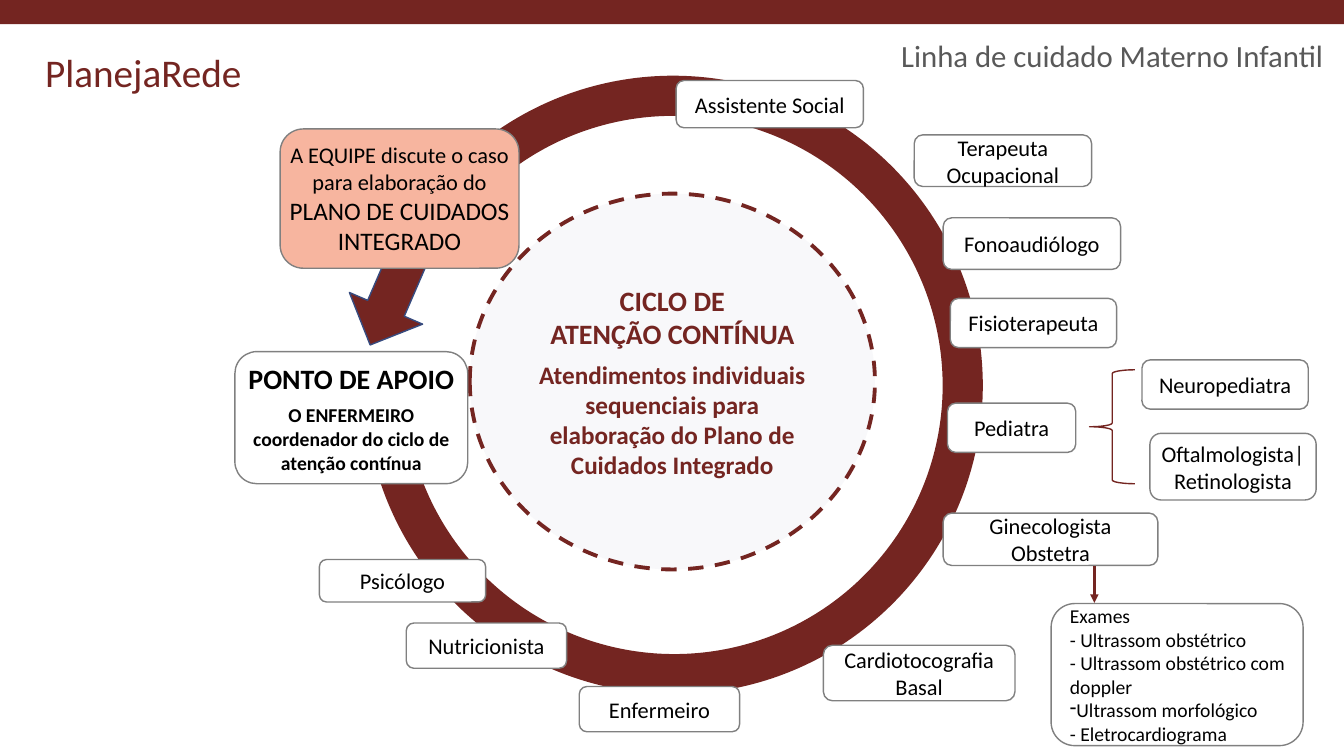
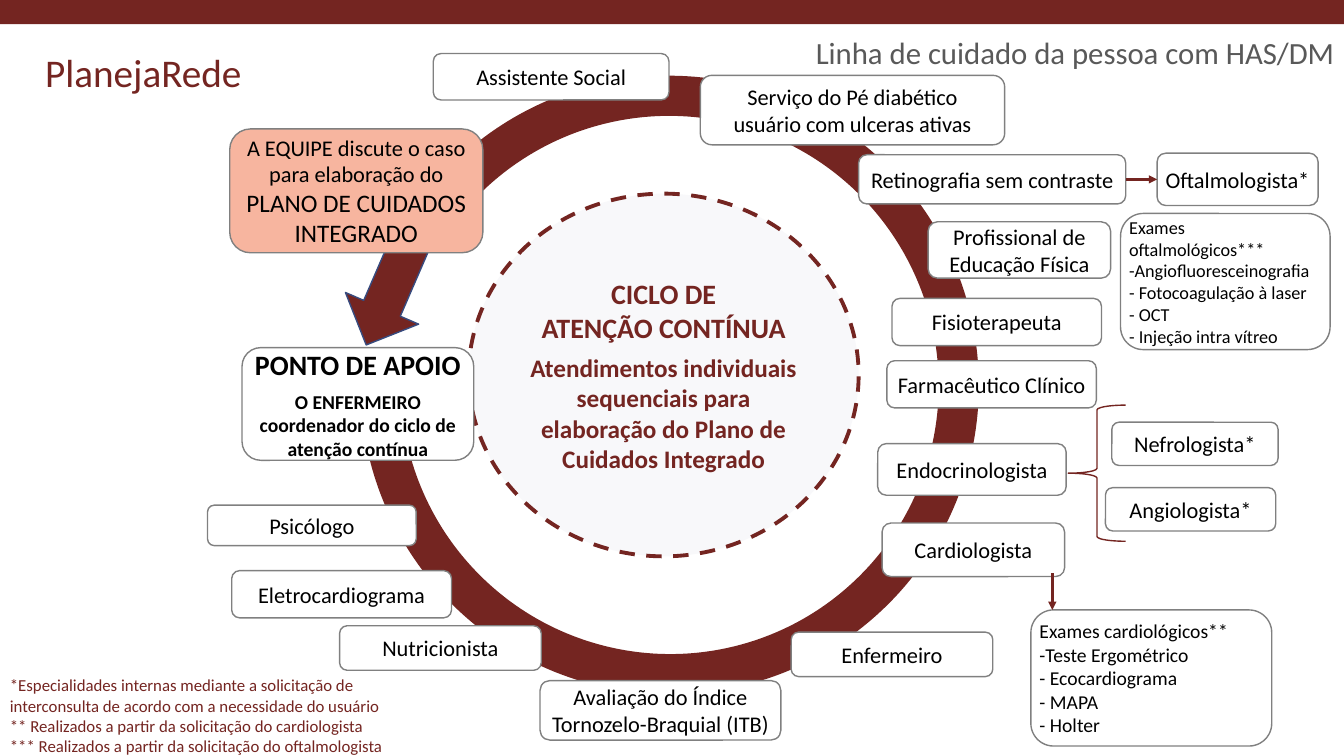
from lxml.etree import SubElement
from pptx import Presentation
from pptx.dml.color import RGBColor
from pptx.enum.dml import MSO_LINE
from pptx.enum.shapes import MSO_CONNECTOR, MSO_SHAPE
from pptx.enum.text import MSO_ANCHOR, MSO_AUTO_SIZE, PP_ALIGN
from pptx.oxml.ns import qn
from pptx.util import Cm, Pt

FONT = "Calibri"
COLORS = {
    "wine": "742521",
    "white": "FFFFFF",
    "black": "000000",
    "gray": "808080",
    "title": "595959",
    "salmon": "F7B59F",
    "pale": "F8F8FA",
    "navy": "374B7F",
}
PAGE_WIDTH, PAGE_HEIGHT = 33.87, 19.05

# Role boxes: text lines, then left, top, width and height in centimetres
MATERNAL_ROLES = [
    (["Enfermeiro"], (14.6, 17.3, 4.04, 1.14)),
    (["Psicólogo"], (8.05, 14.1, 4.19, 1.07)),
    (["Assistente Social"], (17.04, 2.03, 4.72, 1.19)),
    (["Nutricionista"], (10.24, 15.7, 4.04, 1.14)),
    (["Fonoaudiólogo"], (23.77, 5.49, 4.47, 1.3)),
    (["Ginecologista Obstetra"], (23.77, 12.93, 5.41, 1.32)),
    (["Pediatra"], (23.88, 10.16, 3.23, 1.24)),
    (["Fisioterapeuta"], (23.95, 7.52, 4.19, 1.24)),
    (["Cardiotocografia Basal"], (20.75, 16.26, 4.83, 1.4)),
    (["Neuropediatra"], (28.78, 9.07, 4.19, 1.24)),
    (["Oftalmologista|", "Retinologista"], (28.98, 10.92, 4.19, 1.68)),
    (["Terapeuta Ocupacional"], (23.04, 3.4, 4.47, 1.3)),
]
CHRONIC_ROLES = [
    (["Enfermeiro"], (19.94, 15.93, 5.08, 1.12)),
    (["Psicólogo"], (5.23, 12.73, 5.26, 1.02)),
    (["Assistente Social"], (10.92, 1.35, 5.94, 1.17)),
    (["Profissional de Educação Física"], (23.39, 5.59, 4.6, 1.42)),
    (["Fisioterapeuta"], (22.48, 7.52, 5.28, 1.19)),
    (["Eletrocardiograma"], (5.84, 14.38, 5.54, 1.19)),
    (["Nutricionista"], (8.56, 15.77, 5.08, 1.12)),
    (["Avaliação do Índice Tornozelo-Braquial (ITB)"], (13.61, 17.15, 6.07, 1.5)),
    (["Cardiologista"], (22.23, 13.18, 4.6, 1.35)),
    (["Endocrinologista"], (22.12, 11.18, 4.75, 1.3)),
    (["Angiologista*"], (27.86, 12.29, 4.29, 1.09)),
    (["Nefrologista*"], (28.02, 10.64, 4.19, 1.09)),
    (["Farmacêutico Clínico"], (22.35, 9.09, 5.28, 1.19)),
    (["Serviço do Pé diabético", "usuário com ulceras ativas"], (17.65, 1.9, 7.67, 1.75)),
]


def color(name):
    return RGBColor.from_string(COLORS[name])


def lengths(values):
    return [Cm(value) for value in values]


def write(box, lines, tint="black", bold=False, align=PP_ALIGN.LEFT):
    """Fill a box with paragraphs given as (text, size, space before)."""
    frame = box.text_frame
    for index, (text, size, before) in enumerate(lines):
        paragraph = frame.add_paragraph() if index else frame.paragraphs[0]
        paragraph.alignment = align
        if before:
            paragraph.space_before = Pt(before)
        span = paragraph.add_run()
        span.text = text
        span.font.name = FONT
        span.font.size = Pt(size)
        span.font.bold = bold
        span.font.color.rgb = color(tint)


def same_size(texts, size):
    return [(text, size, 0) for text in texts]


def add_figure(page, kind, place, fill=None, line=None, width=1):
    figure = page.shapes.add_shape(kind, *lengths(place))
    figure.shadow.inherit = False
    if fill:
        figure.fill.solid()
        figure.fill.fore_color.rgb = color(fill)
    else:
        figure.fill.background()
    if line:
        figure.line.color.rgb = color(line)
        figure.line.width = Pt(width)
    else:
        figure.line.fill.background()
    return figure


def tighten(box):
    frame = box.text_frame
    frame.word_wrap = True
    frame.vertical_anchor = MSO_ANCHOR.MIDDLE
    frame.margin_left = frame.margin_right = Cm(0.05)
    frame.margin_top = frame.margin_bottom = Cm(0.05)


def add_card(page, place, lines, fill="white", bold=False, align=PP_ALIGN.CENTER):
    card = add_figure(page, MSO_SHAPE.ROUNDED_RECTANGLE, place, fill, "gray")
    tighten(card)
    write(card, lines, bold=bold, align=align)
    return card


def add_exams(page, place, texts, size):
    return add_card(page, place, same_size(texts, size), align=PP_ALIGN.LEFT)


def indent_list(box, dashed):
    """Indent every paragraph and give the one at index dashed a dash bullet."""
    for index, paragraph in enumerate(box.text_frame.paragraphs):
        properties = paragraph._p.get_or_add_pPr()
        properties.set("marL", str(Cm(0.25)))
        properties.set("indent", "0")
        if index == dashed:
            SubElement(properties, qn("a:buChar")).set("char", "-")


def add_arrow(page, start, end):
    arrow = page.shapes.add_connector(MSO_CONNECTOR.STRAIGHT, *lengths(start + end))
    arrow.line.color.rgb = color("wine")
    arrow.line.width = Pt(1.75)
    SubElement(arrow.line._get_or_add_ln(), qn("a:tailEnd")).set("type", "triangle")
    SubElement(arrow.element.spPr, qn("a:effectLst"))
    return arrow


def add_brace(page, place):
    add_figure(page, MSO_SHAPE.LEFT_BRACE, place, line="wine")


def add_note(page, place, lines, wrap=True):
    note = page.shapes.add_textbox(*lengths(place))
    note.text_frame.word_wrap = wrap
    write(note, lines, "wine")
    return note


def add_title(page, text, place):
    title = page.shapes.title
    title.left, title.top, title.width, title.height = lengths(place)
    title.text_frame.vertical_anchor = MSO_ANCHOR.MIDDLE
    title.text_frame.auto_size = MSO_AUTO_SIZE.NONE
    write(title, [(text, 22, 0)], "title", align=PP_ALIGN.RIGHT)
    title.text_frame.paragraphs[0].line_spacing = 0.9


def brand_layout(page):
    """Build the top band and programme name, then hand them to the layout."""
    band = add_figure(page, MSO_SHAPE.RECTANGLE, (0, 0, PAGE_WIDTH, 0.61), "wine")
    label = add_note(page, (0.89, 1.09, 5.46, 1.45), [("PlanejaRede", 28, 0)], wrap=False)
    for number, shape in enumerate((band, label), 20):
        shape.element.nvSpPr.cNvPr.id = number
        page.slide_layout.shapes.element.append(shape.element)


def add_cycle(page, shift, circle, support, team):
    """Draw the ring, its centre and the two cards joined by the block arrow."""
    ring = add_figure(page, MSO_SHAPE.BLOCK_ARC, (9.19 + shift, 1.9, 15.57, 15.6), "wine")
    ring.rotation = 136.7
    for index, value in enumerate((44.48, 18.94, 0.065)):
        ring.adjustments[index] = value

    centre = add_figure(page, MSO_SHAPE.OVAL, circle, "pale", "wine", 2.75)
    centre.line.dash_style = MSO_LINE.DASH
    tighten(centre)
    write(centre, [
        ("CICLO DE", 20, 0),
        ("ATENÇÃO CONTÍNUA", 20, 0),
        ("Atendimentos individuais sequenciais para elaboração do Plano de "
         "Cuidados Integrado", 18, 6),
    ], "wine", True, PP_ALIGN.CENTER)

    add_card(page, support, [
        ("PONTO DE APOIO", 20, 0),
        ("O ENFERMEIRO coordenador do ciclo de atenção contínua", 14, 6),
    ], bold=True)
    arrow = add_figure(page, MSO_SHAPE.DOWN_ARROW, (8.94 + shift, 5.72, 2.01, 3.1),
                       "wine", "navy")
    arrow.rotation = 23.4
    add_card(page, team, same_size(["A EQUIPE discute o caso", "para elaboração do"], 16)
             + same_size(["PLANO DE CUIDADOS", "INTEGRADO"], 18), "salmon")


def add_roles(page, roles):
    for texts, place in roles:
        add_card(page, place, same_size(texts, 16))


def build_maternal(page):
    add_title(page, "Linha de cuidado Materno Infantil", (21.46, 0.64, 12.14, 1.63))
    add_cycle(page, 0, circle=(11.84, 4.88, 10.21, 9.47),
              support=(5.92, 8.86, 5.87, 3.33), team=(7.06, 3.25, 6.02, 3.51))
    add_roles(page, MATERNAL_ROLES)
    add_brace(page, (27.46, 9.32, 1.14, 2.87))
    exams = add_exams(page, (26.49, 15.21, 6.35, 3.58), [
        "Exames",
        "- Ultrassom obstétrico",
        "- Ultrassom obstétrico com doppler",
        "Ultrassom morfológico",
        "- Eletrocardiograma",
    ], 14)
    indent_list(exams, dashed=3)
    add_arrow(page, (27.58, 14.27), (27.58, 15.19))


def build_chronic(page):
    add_title(page, "Linha de cuidado da pessoa com HAS/DM", (19.76, 0.56, 14.12, 1.63))
    add_cycle(page, -0.1, circle=(11.81, 4.88, 9.83, 9.14),
              support=(6.1, 8.76, 5.84, 2.84), team=(5.79, 3.25, 6.38, 3.12))
    add_roles(page, CHRONIC_ROLES)
    add_brace(page, (26.92, 10.21, 1.45, 3.43))
    retinography = add_card(page, (21.64, 3.9, 6.73, 1.24),
                            [("Retinografia sem contraste", 16, 0)])
    ophthalmologist = add_card(page, (29.16, 3.86, 4.06, 1.32),
                               [("Oftalmologista*", 16, 0)])
    referral = add_arrow(page, (28.37, 4.52), (29.16, 4.52))
    referral.begin_connect(retinography, 3)
    referral.end_connect(ophthalmologist, 1)
    add_exams(page, (28.24, 5.38, 5.28, 3.43), [
        "Exames oftalmológicos***",
        "-Angiofluoresceinografia",
        "- Fotocoagulação à laser",
        "- OCT",
        "- Injeção intra vítreo",
    ], 13)
    add_exams(page, (25.98, 15.37, 6.07, 3.43), [
        "Exames cardiológicos**",
        "-Teste Ergométrico",
        "- Ecocardiograma",
        "- MAPA",
        "- Holter",
    ], 14)
    add_arrow(page, (26.52, 14.45), (26.52, 15.37))
    add_note(page, (0, 16.89, 10.97, 2.31), same_size([
        "*Especialidades internas mediante a solicitação de interconsulta de acordo "
        "com a necessidade do usuário",
        "** Realizados a partir da solicitação do cardiologista",
        "*** Realizados a partir da solicitação do oftalmologista",
    ], 12))


def main():
    deck = Presentation()
    deck.slide_width, deck.slide_height = lengths((PAGE_WIDTH, PAGE_HEIGHT))
    layout = deck.slide_layouts.get_by_name("Title Only")
    maternal, chronic = [deck.slides.add_slide(layout) for _ in range(2)]
    brand_layout(maternal)
    build_maternal(maternal)
    build_chronic(chronic)
    deck.save("out.pptx")


if __name__ == "__main__":
    main()
